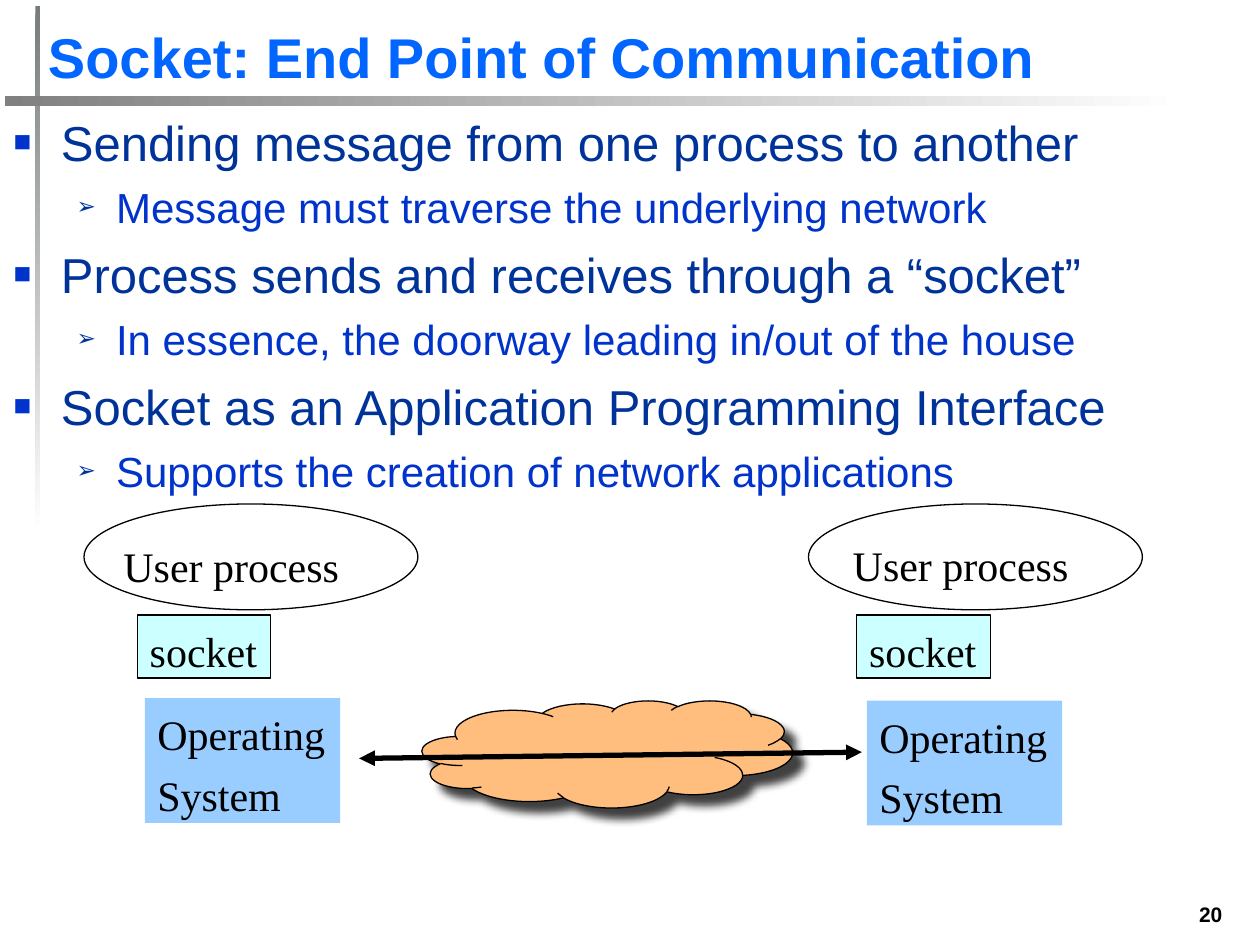
from lxml import etree
from pptx import Presentation
from pptx.dml.color import RGBColor
from pptx.enum.shapes import MSO_CONNECTOR, MSO_SHAPE
from pptx.enum.text import MSO_ANCHOR, PP_ALIGN
from pptx.oxml.ns import qn
from pptx.util import Pt

RECT, OVAL, CLOUD = MSO_SHAPE.RECTANGLE, MSO_SHAPE.OVAL, MSO_SHAPE.CLOUD
LINE = MSO_CONNECTOR.STRAIGHT
TOP, BASE = MSO_ANCHOR.TOP, MSO_ANCHOR.BOTTOM
LEFT, RIGHT = PP_ALIGN.LEFT, PP_ALIGN.RIGHT

SANS, SERIF = "Arial", "Times New Roman"
BLACK = "000000"
LABEL = {"name": SERIF, "size": Pt(24), "color": BLACK}
HEAD = {"name": SANS, "size": Pt(32), "bold": True, "color": "0066FF"}
PAGE = {"name": SANS, "size": Pt(12), "bold": True, "color": BLACK}

LEVELS = [
    {"left": 27, "hang": 27, "mark": "■", "tint": "0033CC", "pct": 60,
     "font": {"name": SANS, "size": Pt(28), "color": "003399"}},
    {"left": 58.5, "hang": 22.5, "mark": "➢", "tint": "003399", "pct": 55,
     "font": {"name": SANS, "size": Pt(24), "color": "0033CC"}},
]
POINTS = [
    (0, "Sending message from one process to another"),
    (1, "Message must traverse the underlying network"),
    (0, "Process sends and receives through a “socket”"),
    (1, "In essence, the doorway leading in/out of the house"),
    (0, "Socket as an Application Programming Interface"),
    (1, "Supports the creation of network applications"),
]
HOSTS = [
    {"oval": (48, 288), "user": (63.4, 303.1),
     "sock": (78.5, 351.4), "core": (82.8, 398.9)},
    {"oval": (462, 288), "user": (480.2, 302.4),
     "sock": (489.6, 351.4), "core": (495.4, 400.3)},
]


def tone(code):
    """Turn a hex string into a colour."""
    return RGBColor.from_string(code)


def node(root, tag, **attrs):
    """Append a drawing element with attributes to a parent."""
    item = etree.SubElement(root, qn(tag))
    for key, val in attrs.items():
        item.set(key, str(val))
    return item


def style(font, form):
    """Apply a dict of format values to a font."""
    for key, val in form.items():
        if key == "color":
            font.color.rgb = tone(val)
        else:
            setattr(font, key, val)


def write(para, text, form, align=LEFT):
    """Put one formatted run into a paragraph."""
    para.alignment = align
    run = para.add_run()
    run.text = text
    style(run.font, form)


def setup(frame, wrap=True, anchor=TOP, top=3.6):
    """Set wrapping, anchor and insets of a text frame."""
    form = {"word_wrap": wrap, "vertical_anchor": anchor,
            "margin_left": Pt(7.2), "margin_right": Pt(7.2),
            "margin_top": Pt(top), "margin_bottom": Pt(3.6)}
    for key, val in form.items():
        setattr(frame, key, val)


def shape(slide, kind, box, fill=None, edge=None):
    """Add a preset shape with a plain fill and outline."""
    item = slide.shapes.add_shape(kind, *map(Pt, box))
    item.shadow.inherit = False
    if fill:
        item.fill.solid()
        item.fill.fore_color.rgb = tone(fill)
    else:
        item.fill.background()
    if edge:
        item.line.color.rgb = tone(edge)
        item.line.width = Pt(0.75)
    else:
        item.line.fill.background()
    return item


def bar(slide, box, start, angle):
    """Add a bar that fades from a colour to white."""
    fill = shape(slide, RECT, box).fill
    fill.gradient()
    fill.gradient_angle = angle
    for stop, code, place in zip(fill.gradient_stops, (start, "FFFFFF"), (0, 1)):
        stop.color.rgb = tone(code)
        stop.position = place


def label(item, lines):
    """Write serif lines into a shape or text box."""
    frame = item.text_frame
    setup(frame, wrap=False, top=6)
    for i, line in enumerate(lines):
        para = frame.add_paragraph() if i else frame.paragraphs[0]
        if i:
            para.space_before = Pt(6)
        write(para, line, LABEL)


def title(slide, text):
    """Place and format the title placeholder."""
    item = slide.shapes.title
    box = {"left": 20.2, "top": 10.1, "width": 645.8, "height": 44.6}
    for key, val in box.items():
        setattr(item, key, Pt(val))
    setup(item.text_frame, anchor=BASE)
    write(item.text_frame.paragraphs[0], text, HEAD)


def bullet(para, level):
    """Give a paragraph the indent and mark of its level."""
    rule = LEVELS[level]
    para.level = level
    props = para._p.get_or_add_pPr()
    props.set("marL", str(Pt(rule["left"])))
    props.set("indent", str(-Pt(rule["hang"])))
    node(node(props, "a:buClr"), "a:srgbClr", val=rule["tint"])
    node(props, "a:buSzPct", val=rule["pct"] * 1000)
    node(props, "a:buFont", typeface=SANS)
    node(props, "a:buChar", char=rule["mark"])


def points(slide):
    """Add the two-level bullet list."""
    box = map(Pt, (0.7, 57.6, 719.3, 245.5))
    frame = slide.shapes.add_textbox(*box).text_frame
    setup(frame, top=6.5)
    for i, (level, text) in enumerate(POINTS):
        para = frame.add_paragraph() if i else frame.paragraphs[0]
        bullet(para, level)
        form = LEVELS[level]["font"]
        if i:
            para.space_before = Pt(form["size"].pt / 4)
        write(para, text, form)


def host(slide, oval, user, sock, core):
    """Add one end system: process, socket and operating system."""
    shape(slide, OVAL, (*oval, 190.8, 60.5), edge=BLACK)
    label(shape(slide, RECT, (*sock, 76.3, 36), "CCFFFF", BLACK), ["socket"])
    text = slide.shapes.add_textbox(*map(Pt, (*user, 139, 36)))
    label(text, ["User process"])
    label(shape(slide, RECT, (*core, 111.6, 71.3), "99CCFF"),
          ["Operating", "System"])


def cloud(slide):
    """Add the network cloud with its soft shadow."""
    item = shape(slide, CLOUD, (241.2, 400.3, 211.7, 61.2), "FFBE7D", BLACK)
    glow = node(item._element.spPr.find(qn("a:effectLst")), "a:outerShdw",
                blurRad=Pt(5), dist=Pt(8.5), dir=45 * 60000,
                algn="tl", rotWithShape=0)
    node(node(glow, "a:srgbClr", val=BLACK), "a:alpha", val=75000)


def arrow(slide, ends):
    """Add a thick line with a head at both ends."""
    item = slide.shapes.add_connector(LINE, *map(Pt, ends))
    item.line.color.rgb = tone(BLACK)
    item.line.width = Pt(3)
    line = item.line._get_or_add_ln()
    for tag in ("a:headEnd", "a:tailEnd"):
        node(line, tag, type="triangle")
    node(item._element.spPr, "a:effectLst")


def number(slide, text):
    """Add the page number at the lower right."""
    box = map(Pt, (660.2, 511.9, 45.4, 21.6))
    frame = slide.shapes.add_textbox(*box).text_frame
    setup(frame)
    write(frame.paragraphs[0], text, PAGE, RIGHT)


def main():
    """Build the slide and save it."""
    deck = Presentation()
    deck.slide_width, deck.slide_height = Pt(720), Pt(540)
    slide = deck.slides.add_slide(deck.slide_layouts[5])
    bar(slide, (20.2, 3.6, 2.9, 300.2), "767D79", 270)
    bar(slide, (2.9, 54.7, 674.6, 5.8), "808080", 0)
    title(slide, "Socket: End Point of Communication")
    points(slide)
    for spots in HOSTS:
        host(slide, **spots)
    cloud(slide)
    arrow(slide, (205.2, 433.4, 492.5, 429.8))
    number(slide, "20")
    deck.save("out.pptx")


if __name__ == "__main__":
    main()
